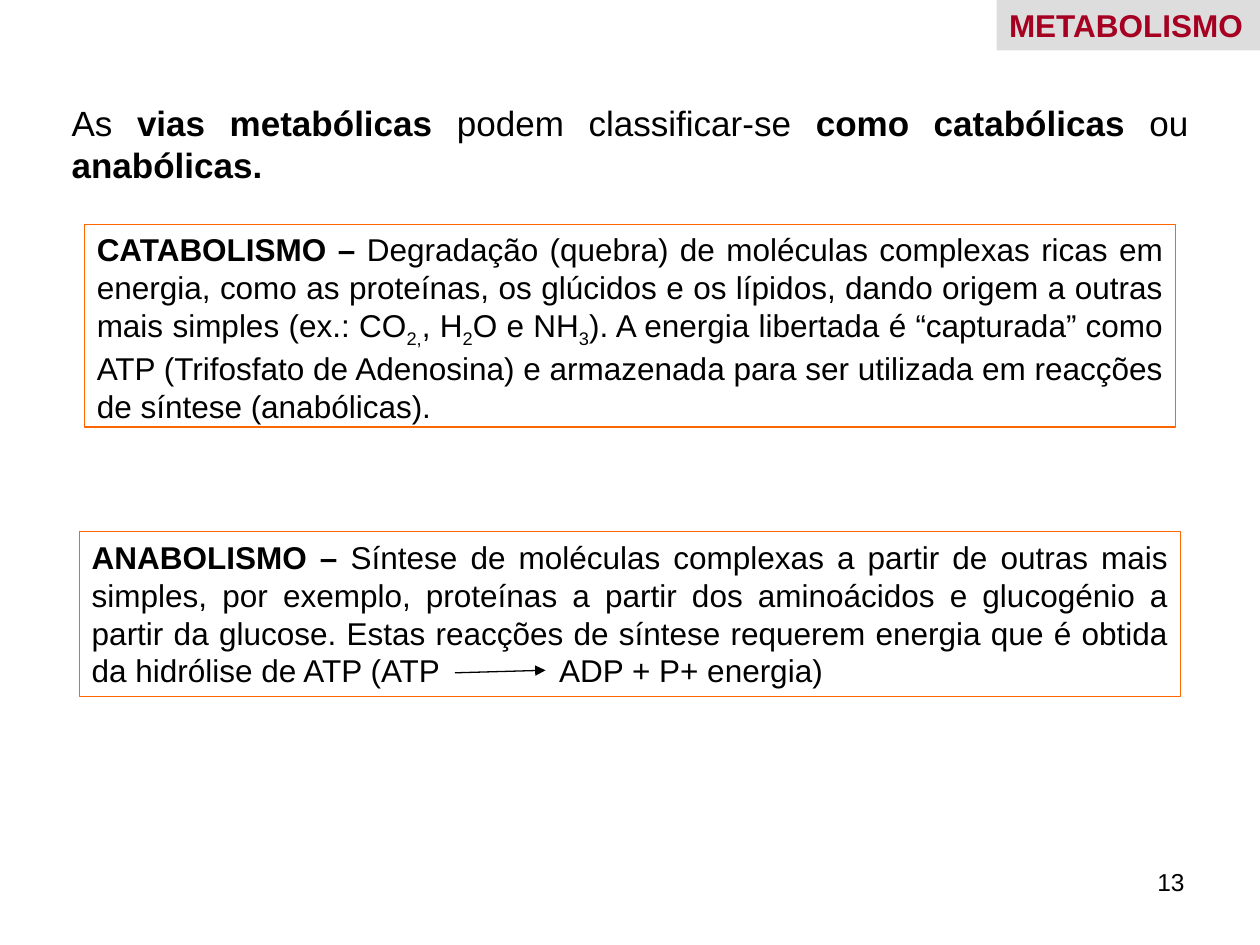
import pptx
import pptx.dml.color
import pptx.enum.shapes
import pptx.enum.text
import pptx.oxml.ns
import pptx.util
from lxml import etree

Inches = pptx.util.Inches
Pt = pptx.util.Pt
ALIGN = pptx.enum.text.PP_ALIGN
qn = pptx.oxml.ns.qn
COLORS = {"text": "000000", "title": "A50021", "band": "DDDDDD", "border": "FF6600"}


def rgb(name):
    return pptx.dml.color.RGBColor.from_string(COLORS[name])


def write(sp, runs, size, align, color="text"):
    """Fill sp with one paragraph of (text, style) runs; style is "", "bold" or "sub"."""
    tf = sp.text_frame
    tf.word_wrap = True
    tf.vertical_anchor = pptx.enum.text.MSO_ANCHOR.TOP
    p = tf.paragraphs[0]
    p.alignment = align
    p.font.name = "Arial"
    p.font.size = Pt(size)
    p.font.color.rgb = rgb(color)
    for text, style in runs:
        r = p.add_run()
        r.text = text
        if style == "bold":
            r.font.bold = True
        elif style == "sub":
            r.font._element.set("baseline", "-25000")
    return p


prs = pptx.Presentation()
prs.slide_width, prs.slide_height = Inches(10), Inches(7.5)
s = prs.slides.add_slide(prs.slide_layouts[6])

# Page number and introduction
page = s.shapes.add_textbox(Inches(7.17), Inches(6.83), Inches(2.33), Inches(0.52))
write(page, [("13", "")], 14, ALIGN.RIGHT)

intro = s.shapes.add_textbox(Inches(0.47), Inches(0.76), Inches(9.06), Inches(0.77))
write(intro, [
    ("As ", ""), ("vias metabólicas", "bold"), (" podem classificar-se ", ""),
    ("como catabólicas", "bold"), (" ou ", ""), ("anabólicas.", "bold"),
], 20, ALIGN.JUSTIFY)

# Outlined definitions, centred on the slide: top, width, height, runs
definitions = [
    (1.78, 8.66, 1.61, [
        ("CATABOLISMO – ", "bold"),
        ("Degradação (quebra) de moléculas complexas ricas em energia, como as "
         "proteínas, os glúcidos e os lípidos, dando origem a outras mais simples "
         "(ex.: CO", ""),
        ("2,", "sub"), (", H", ""), ("2", "sub"), ("O e NH", ""), ("3", "sub"),
        ("). A energia libertada é “capturada” como ATP (Trifosfato de Adenosina) e "
         "armazenada para ser utilizada em reacções de síntese (anabólicas).", ""),
    ]),
    (4.22, 8.74, 1.31, [
        ("ANABOLISMO – ", "bold"),
        ("Síntese de moléculas complexas a partir de outras mais simples, por exemplo, "
         "proteínas a partir dos aminoácidos e glucogénio a partir da glucose. Estas "
         "reacções de síntese requerem energia que é obtida da hidrólise de ATP "
         "(ATP\tADP + P+ energia)", ""),
    ]),
]
for top, width, height, runs in definitions:
    sp = s.shapes.add_shape(pptx.enum.shapes.MSO_SHAPE.RECTANGLE, Inches((10 - width) / 2),
                            Inches(top), Inches(width), Inches(height))
    sp.shadow.inherit = False
    sp.fill.background()
    sp.line.color.rgb = rgb("border")
    sp.line.width = Pt(0.75)
    p = write(sp, runs, 18, ALIGN.JUSTIFY)

# Tab stop in the last definition leaves room for the reaction arrow
tabs = etree.Element(qn("a:tabLst"))
etree.SubElement(tabs, qn("a:tab"), pos=str(Inches(3.71)), algn="l")
p._p.pPr.find(qn("a:defRPr")).addprevious(tabs)

arrow = s.shapes.add_connector(pptx.enum.shapes.MSO_CONNECTOR.STRAIGHT,
                               Inches(3.61), Inches(5.34), Inches(4.33), Inches(5.32))
arrow.line.color.rgb = rgb("text")
arrow.line.width = Pt(0.75)
etree.SubElement(arrow.line._get_or_add_ln(), qn("a:tailEnd"), type="triangle")
etree.SubElement(arrow._element.spPr, qn("a:effectLst"))

# Section label in the top right corner
label = s.shapes.add_shape(pptx.enum.shapes.MSO_SHAPE.RECTANGLE,
                           Inches(7.91), 0, Inches(2.09), Inches(0.4))
label.shadow.inherit = False
label.fill.solid()
label.fill.fore_color.rgb = rgb("band")
label.line.fill.background()
write(label, [("METABOLISMO", "bold")], 18, ALIGN.LEFT, "title")

prs.save("out.pptx")
